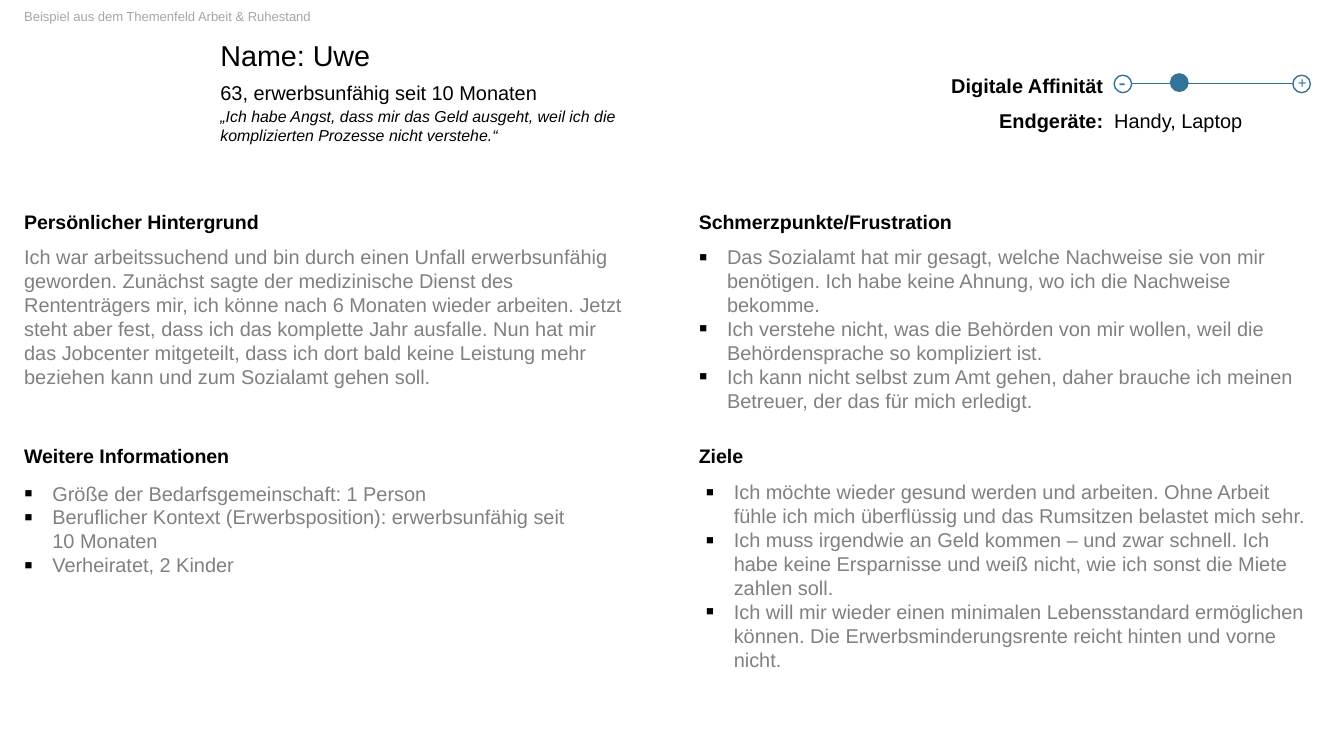
from dataclasses import dataclass

from lxml import etree
from pptx import Presentation
from pptx import util as u
from pptx.dml.color import RGBColor
from pptx.enum import shapes, text
from pptx.oxml.ns import qn


@dataclass
class Theme:
    font: str = "Arial"
    black: str = "000000"
    white: str = "FFFFFF"
    body: str = "808080"
    muted: str = "A6A6A6"
    accent: str = "337299"
    name_size: float = 15.4
    text_size: float = 10.7
    heading_size: float = 10.5
    quote_size: float = 8.5
    note_size: float = 7
    plus_size: float = 8.1
    minus_size: float = 11.6


theme = Theme()
LEFT, RIGHT, PROFILE, SCALE = 0.18, 5.2, 1.64, 8.29  # column starts
ROWS = [1.56, 3.3]  # heading rows
COLUMN_WIDTH, LINE, INDENT, KNOB = 4.5, 0.18, 0.21, 0.13

presentation = Presentation()
presentation.slide_width = u.Inches(10)
presentation.slide_height = presentation.slide_width * 9 // 16
slide = presentation.slides.add_slide(presentation.slide_layouts[4])


def write(box, paragraphs, size, color=theme.black, bold=False, italic=False,
          align=text.PP_ALIGN.LEFT, bullets=False):
    """Place a (shape, left, top, width, height) box and fill it with formatted paragraphs."""
    shape, *lengths = box
    if shape is None:
        shape = slide.shapes.add_textbox(0, 0, 0, 0)
    shape.left, shape.top, shape.width, shape.height = map(u.Inches, lengths)
    frame = shape.text_frame
    frame.word_wrap = True
    frame.auto_size = text.MSO_AUTO_SIZE.NONE
    frame.vertical_anchor = text.MSO_ANCHOR.TOP
    frame.margin_left = frame.margin_top = frame.margin_right = frame.margin_bottom = 0
    for number, content in enumerate(paragraphs):
        paragraph = frame.add_paragraph() if number else frame.paragraphs[0]
        paragraph.text = content
        if bullets:
            paragraph.level = 1
            properties = paragraph._p.get_or_add_pPr()
            properties.set("marL", str(u.Inches(INDENT)))
            properties.set("indent", str(-u.Inches(INDENT)))
            bullet_color = etree.SubElement(properties, qn("a:buClr"))
            etree.SubElement(bullet_color, qn("a:srgbClr"), val=theme.black)
            etree.SubElement(properties, qn("a:buSzPct"), val="125000")
            etree.SubElement(properties, qn("a:buFont"), typeface=theme.font)
            etree.SubElement(properties, qn("a:buChar"), char="▪")
        paragraph.alignment = align
        paragraph.line_spacing = 1.0
        paragraph.space_before = paragraph.space_after = u.Pt(0)
        for run in paragraph.runs:
            run.font.name, run.font.size = theme.font, u.Pt(size)
            run.font.bold, run.font.italic = bold, italic
            run.font.color.rgb = RGBColor.from_string(color)


# Topic note and profile
write((None, LEFT, 0.06, 4.12, 0.12), ["Beispiel aus dem Themenfeld Arbeit & Ruhestand"],
      theme.note_size, theme.muted)
write((slide.shapes.title, PROFILE, 0.28, 8.11, 0.26), ["Name: Uwe"], theme.name_size)
write((None, PROFILE, 0.6, 2.75, LINE), ["63, erwerbsunfähig seit 10 Monaten"], theme.text_size)
write((None, PROFILE, 0.79, 3.28, 0.29),
      ["„Ich habe Angst, dass mir das Geld ausgeht, weil ich die komplizierten Prozesse "
       "nicht verstehe.“"], theme.quote_size, italic=True)

# Digital affinity and devices
for label, top in [("Digitale Affinität", 0.55), ("Endgeräte:", 0.81)]:
    write((None, 6.61, top, 1.6, LINE), [label], theme.text_size, bold=True,
          align=text.PP_ALIGN.RIGHT)
write((None, SCALE, 0.81, 1.31, LINE), ["Handy, Laptop"], theme.text_size)

# Affinity scale: line, end circles, current value
accent = RGBColor.from_string(theme.accent)
scale_line = slide.shapes.add_connector(
    shapes.MSO_CONNECTOR.STRAIGHT, u.Inches(8.36), u.Inches(0.62), u.Inches(9.64), u.Inches(0.62))
scale_line.line.color.rgb = accent
scale_line.line.width = u.Pt(0.75)
etree.SubElement(scale_line._element.spPr, qn("a:effectLst"))
for left, top, fill in [(SCALE, 0.56, theme.white), (9.62, 0.56, theme.white),
                        (8.71, 0.55, theme.accent)]:
    knob = slide.shapes.add_shape(shapes.MSO_SHAPE.OVAL, u.Inches(left), u.Inches(top),
                                  u.Inches(KNOB), u.Inches(KNOB))
    knob.shadow.inherit = False
    knob.fill.solid()
    knob.fill.fore_color.rgb = RGBColor.from_string(fill)
    knob.line.color.rgb = accent
    knob.line.width = u.Pt(0.75)
for sign, left, top, width, height, size in [("-", 8.32, 0.51, 0.06, 0.2, theme.minus_size),
                                             ("+", 9.64, 0.55, 0.1, 0.14, theme.plus_size)]:
    write((None, left, top, width, height), [sign], size, theme.accent,
          align=text.PP_ALIGN.CENTER)

# Section headings
for heading, left, top, width in [("Persönlicher Hintergrund", LEFT, ROWS[0], COLUMN_WIDTH),
                                  ("Schmerzpunkte/Frustration", RIGHT, ROWS[0], 2.73),
                                  ("Weitere Informationen", LEFT, ROWS[1], 2.74),
                                  ("Ziele", RIGHT, ROWS[1], 2.62)]:
    write((None, left, top, width, LINE), [heading], theme.heading_size, bold=True)

# Section bodies: placeholder index, position, bulleted or not, paragraphs
sections = [
    (1, LEFT, 1.82, COLUMN_WIDTH, 1.51, False, [
        "Ich war arbeitssuchend und bin durch einen Unfall erwerbsunfähig geworden. Zunächst "
        "sagte der medizinische Dienst des Rententrägers mir, ich könne nach 6 Monaten wieder "
        "arbeiten. Jetzt steht aber fest, dass ich das komplette Jahr ausfalle. Nun hat mir das "
        "Jobcenter mitgeteilt, dass ich dort bald keine Leistung mehr beziehen kann und zum "
        "Sozialamt gehen soll."]),
    (2, RIGHT, 1.82, COLUMN_WIDTH, 0.82, True, [
        "Das Sozialamt hat mir gesagt, welche Nachweise sie von mir benötigen. Ich habe keine "
        "Ahnung, wo ich die Nachweise bekomme.",
        "Ich verstehe nicht, was die Behörden von mir wollen, weil die Behördensprache so "
        "kompliziert ist.",
        "Ich kann nicht selbst zum Amt gehen, daher brauche ich meinen Betreuer, der das für "
        "mich erledigt."]),
    (3, LEFT, 3.58, 4.27, 0.41, True, [
        "Größe der Bedarfsgemeinschaft: 1 Person",
        "Beruflicher Kontext (Erwerbsposition): erwerbsunfähig seit\n10 Monaten",
        "Verheiratet, 2 Kinder"]),
    (4, RIGHT + 0.05, 3.57, COLUMN_WIDTH, 1.51, True, [
        "Ich möchte wieder gesund werden und arbeiten. Ohne Arbeit fühle ich mich überflüssig "
        "und das Rumsitzen belastet mich sehr.",
        "Ich muss irgendwie an Geld kommen – und zwar schnell. Ich habe keine Ersparnisse und "
        "weiß nicht, wie ich sonst die Miete zahlen soll.",
        "Ich will mir wieder einen minimalen Lebensstandard ermöglichen können. Die "
        "Erwerbsminderungsrente reicht hinten und vorne nicht."]),
]
for index, left, top, width, height, bullets, paragraphs in sections:
    write((slide.placeholders[index], left, top, width, height), paragraphs,
          theme.text_size, theme.body, bullets=bullets)

presentation.save("out.pptx")
